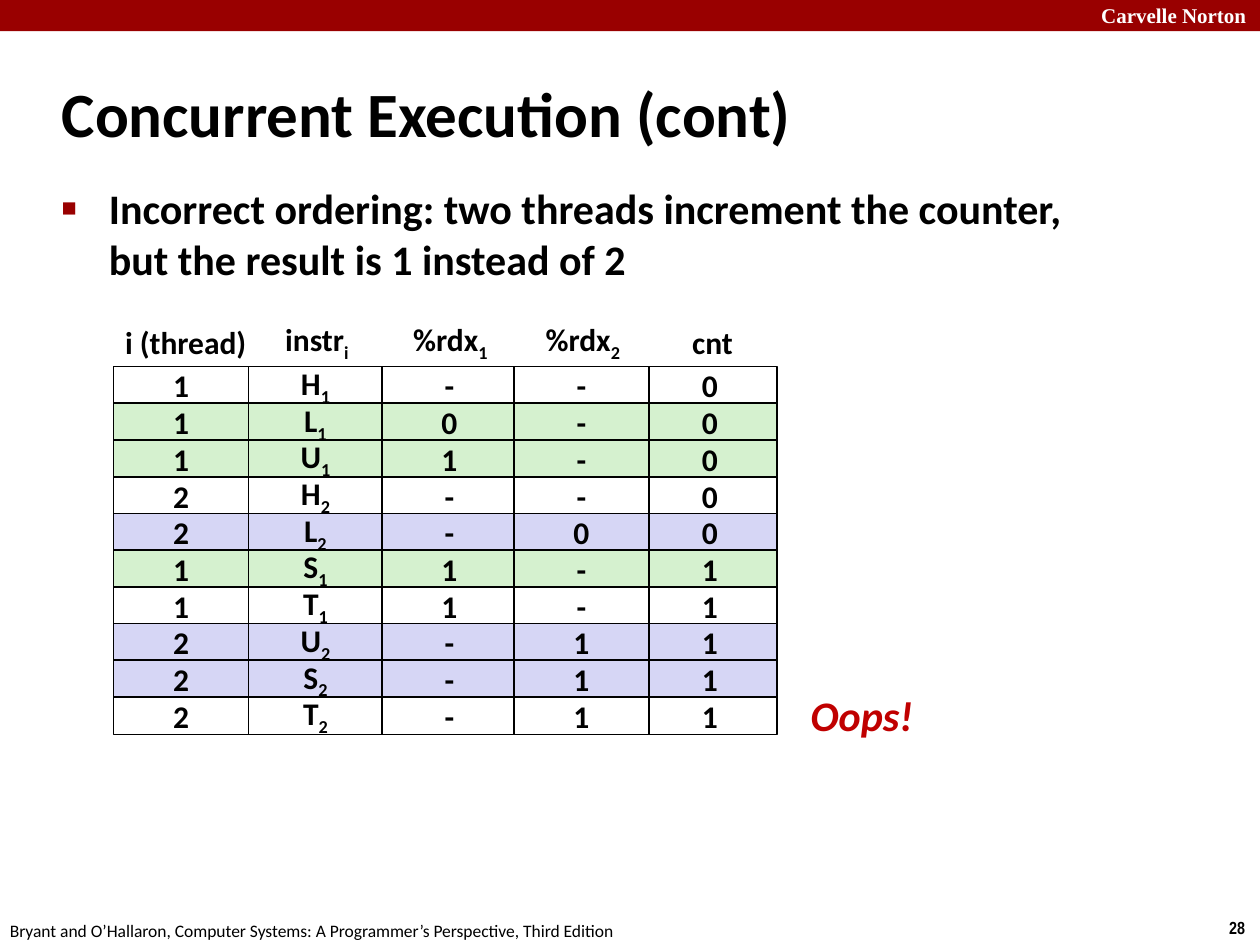
from lxml.etree import SubElement as Sub
from pptx import Presentation
from pptx.dml.color import RGBColor as RGB
from pptx.enum.shapes import MSO_SHAPE as Shape
from pptx.enum.text import MSO_ANCHOR as Anchor, MSO_AUTO_SIZE as Auto, PP_ALIGN as Align
from pptx.oxml.ns import qn
from pptx.util import Cm, Pt

# Content: an underscore marks the start of a subscript
TITLE = "Concurrent Execution (cont)"
BODY = ("Incorrect ordering: two threads increment the counter, "
        "but the result is 1 instead of 2")
ROWS = [
    ("white", "1", "H_1", "-", "-", "0"),
    ("green", "1", "L_1", "0", "-", "0"),
    ("green", "1", "U_1", "1", "-", "0"),
    ("white", "2", "H_2", "-", "-", "0"),
    ("blue", "2", "L_2", "-", "0", "0"),
    ("green", "1", "S_1", "1", "-", "1"),
    ("white", "1", "T_1", "1", "-", "1"),
    ("blue", "2", "U_2", "-", "1", "1"),
    ("blue", "2", "S_2", "-", "1", "1"),
    ("white", "2", "T_2", "-", "1", "1"),
]
# Column heading, its left edge and width, left edge of the cells (cm)
COLS = [
    ("i (thread)", 2.26, 2.97, 2.29),
    ("instr_i", 5.49, 1.8, 5.0),
    ("%rdx_1", 8.05, 2.06, 7.7),
    ("%rdx_2", 10.72, 2.06, 10.36),
    ("cnt", 13.69, 1.35, 12.95),
]
ORDER = [1, 0, 2, 4, 3]  # back to front: the fourth column overlaps the fifth
HEAD_TOP, HEAD_H = 6.38, 1.02
TOP, STEP, CELL_W, CELL_H = 7.39, 0.74, 2.72, 0.76
# Text, box in cm (left, top, width, height), alignment, font style
NOTES = [
    ("Carvelle Norton", (21.95, -0.08, 3.63, 0.76), Align.LEFT,
     dict(size=12, face="Times New Roman", color="white")),
    ("28", (24.49, 18.36, 0.86, 0.69), Align.RIGHT,
     dict(size=10, face="Arial Narrow")),
    ("Bryant and O’Hallaron, Computer Systems: A Programmer’s Perspective, "
     "Third Edition", (-0.05, 18.42, 12.9, 0.69), Align.LEFT,
     dict(size=10, bold=False)),
    ("Oops!", (16.08, 13.77, 2.59, 1.27), Align.CENTER,
     dict(size=24, color="red", italic=True)),
]
COLORS = dict(black="000000", white="FFFFFF", maroon="990000", red="C00000",
              green="D5F1CF", blue="D6D6F5")


def shade(color):
    return RGB.from_string(COLORS[color])


def write(para, text, size=18, face="Calibri", color="black", bold=True,
          italic=False):
    for n, part in enumerate(text.split("_")):
        run = para.add_run()
        run.text = part
        font = run.font
        font.size, font.name = Pt(size), face
        font.bold, font.italic = bold, italic
        font.color.rgb = shade(color)
        if n:
            run._r.get_or_add_rPr().set("baseline", "-25000")


def place(shape, box):
    shape.left, shape.top, shape.width, shape.height = map(Cm, box)


def fill_text(shape, text, align=Align.CENTER, wrap=False, **style):
    frame = shape.text_frame
    frame.word_wrap = wrap
    frame.vertical_anchor = Anchor.MIDDLE
    para = frame.paragraphs[0]
    para.alignment = align
    write(para, text, **style)


def add_rect(slide, box, color):
    rect = slide.shapes.add_shape(Shape.RECTANGLE, *map(Cm, box))
    rect.shadow.inherit = False
    rect.fill.solid()
    rect.fill.fore_color.rgb = shade(color)
    return rect


def add_note(slide, text, box, align=Align.CENTER, style={}):
    note = slide.shapes.add_textbox(*map(Cm, box))
    fill_text(note, text, align, **style)


def add_grid(slide):
    for c in ORDER:
        head, left, width, edge = COLS[c]
        for n, (color, *texts) in enumerate(ROWS):
            box = (edge, TOP + n * STEP, CELL_W, CELL_H)
            cell = add_rect(slide, box, color)
            cell.line.color.rgb = shade("black")
            cell.line.width = Pt(1)
            fill_text(cell, texts[c], wrap=True)
        add_note(slide, head, (left, HEAD_TOP, width, HEAD_H))


def add_body(shape):
    place(shape, (0.99, 3.56, 21.95, 2.39))
    frame = shape.text_frame
    frame.auto_size = Auto.NONE
    para = frame.paragraphs[0]
    para.space_before = Pt(5)
    write(para, BODY, size=24)
    props = para._p.get_or_add_pPr()
    props.set("marL", str(Cm(0.95)))
    props.set("indent", str(Cm(-0.95)))
    tint = Sub(props, qn("a:buClr"))
    Sub(tint, qn("a:srgbClr"), val=COLORS["maroon"])
    Sub(props, qn("a:buSzPct"), val="60000")
    Sub(props, qn("a:buChar"), char="■")


def main():
    deck = Presentation()
    deck.slide_width, deck.slide_height = Cm(25.4), Cm(19.05)
    slide = deck.slides.add_slide(deck.slide_layouts[1])

    # Top band
    band = add_rect(slide, (0, 0, 25.4, 0.63), "maroon")
    band.line.fill.background()

    # Title and list
    title, body = slide.placeholders
    place(title, (0.99, 1.2, 21.08, 2.11))
    title.text_frame.auto_size = Auto.NONE
    fill_text(title, TITLE, Align.LEFT, wrap=True, size=36)
    add_body(body)

    # Execution trace
    add_grid(slide)

    # Header, footer and remark
    for note in NOTES:
        add_note(slide, *note)

    deck.save("out.pptx")


if __name__ == "__main__":
    main()
